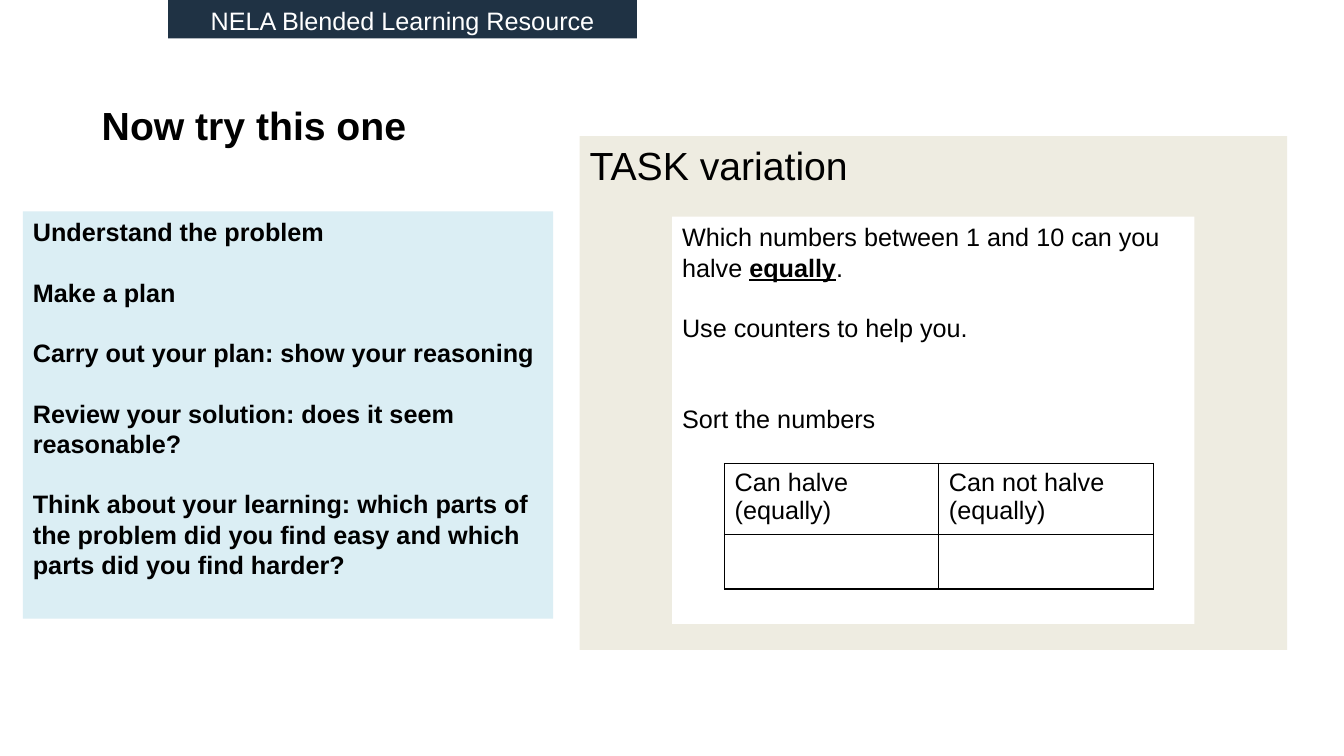
"""Builds the halving task slide."""
from lxml import etree
from pptx import Presentation
from pptx import util as u
from pptx.dml.color import RGBColor
from pptx.enum import shapes, text
from pptx.oxml.ns import qn

BLACK = RGBColor(0x00, 0x00, 0x00)
WHITE = RGBColor(0xFF, 0xFF, 0xFF)
NAVY = RGBColor(0x1F, 0x32, 0x44)
PALE_BLUE = RGBColor(0xDB, 0xEE, 0xF4)
CREAM = RGBColor(0xEE, 0xEC, 0xE1)
LINE = 21.6

STEPS = [
    "Understand the problem",
    "Make a plan",
    "Carry out your plan: show your reasoning",
    "Review your solution: does it seem reasonable?",
    "Think about your learning: which parts of the problem did you find easy "
    "and which parts did you find harder?",
]
HEADINGS = [["Can halve", "(equally)"], ["Can not halve (equally)"]]


def add_span(para, words, size=18, color=BLACK, bold=False, underline=False):
    """Append one formatted run to a paragraph."""
    span = para.add_run()
    span.text = words
    span.font.name = "Arial"
    span.font.size = u.Pt(size)
    span.font.color.rgb = color
    span.font.bold = bold
    span.font.underline = underline


def next_para(frame, index):
    """Return the first paragraph of a frame, or a new one after it."""
    para = frame.add_paragraph() if index else frame.paragraphs[0]
    para.alignment = text.PP_ALIGN.LEFT
    return para


def add_panel(page, left, top, width, height, fill):
    """Draw a plain filled rectangle and return its text frame."""
    box = page.shapes.add_shape(
        shapes.MSO_SHAPE.RECTANGLE, u.Cm(left), u.Cm(top), u.Cm(width), u.Cm(height))
    box.shadow.inherit = False
    box.fill.solid()
    box.fill.fore_color.rgb = fill
    box.line.fill.background()
    frame = box.text_frame
    frame.word_wrap = True
    frame.vertical_anchor = text.MSO_ANCHOR.TOP
    return frame


def add_paras(frame, paras):
    """Write paragraphs given as pairs of lines skipped before and runs."""
    for index, (skipped, spans) in enumerate(paras):
        para = next_para(frame, index)
        para.line_spacing = u.Pt(LINE)
        if skipped:
            para.space_before = u.Pt(skipped * LINE)
        for words, style in spans:
            add_span(para, words, **style)


def add_borders(cell):
    """Give a cell a thin black line on each side."""
    props = cell._tc.get_or_add_tcPr()
    for index, side in enumerate(("lnL", "lnR", "lnT", "lnB")):
        line = etree.Element(qn(f"a:{side}"), w=str(u.Pt(1)))
        fill = etree.SubElement(line, qn("a:solidFill"))
        etree.SubElement(fill, qn("a:srgbClr"), val=str(BLACK))
        props.insert(index, line)


def add_sorting_table(page):
    """Add the table with a heading row and an empty row to fill in."""
    table = page.shapes.add_table(
        2, 2, u.Cm(18.26), u.Cm(11.68), u.Cm(10.8), u.Cm(3.16)).table
    table.first_row = table.horz_banding = False
    for row, height in zip(table.rows, (1.79, 1.37)):
        row.height = u.Cm(height)
    for cell in table.iter_cells():
        cell.fill.solid()
        cell.fill.fore_color.rgb = WHITE
        add_borders(cell)
    for column, lines in enumerate(HEADINGS):
        frame = table.cell(0, column).text_frame
        for index, words in enumerate(lines):
            add_span(next_para(frame, index), words)


def add_title(page, words):
    """Place and fill the title placeholder."""
    title = page.shapes.title
    title.left, title.top = u.Cm(2.31), u.Cm(2.34)
    title.width, title.height = u.Cm(22.86), u.Cm(1.63)
    title.text_frame.vertical_anchor = text.MSO_ANCHOR.MIDDLE
    add_span(next_para(title.text_frame, 0), words, size=28, bold=True)


def main():
    """Build the deck and save it."""
    deck = Presentation()
    deck.slide_width, deck.slide_height = u.Cm(33.87), u.Cm(19.05)
    page = deck.slides.add_slide(deck.slide_layouts[5])
    add_title(page, "Now try this one")

    steps = add_panel(page, 0.58, 5.33, 13.36, 10.26, PALE_BLUE)
    add_paras(steps, [(min(index, 1), [(step, {"bold": True})])
                      for index, step in enumerate(STEPS)])

    banner = add_panel(page, 4.24, 0, 11.81, 0.97, NAVY)
    para = next_para(banner, 0)
    para.alignment = text.PP_ALIGN.CENTER
    add_span(para, "NELA Blended Learning Resource", color=WHITE)

    task = add_panel(page, 14.61, 3.43, 17.83, 12.95, CREAM)
    add_span(next_para(task, 0), "TASK variation", size=28)

    question = add_panel(page, 16.94, 5.46, 13.16, 10.26, WHITE)
    add_paras(question, [
        (0, [("Which numbers between 1 and 10 can you halve ", {}),
             ("equally", {"bold": True, "underline": True}), (".", {})]),
        (1, [("Use counters to help you.", {})]),
        (2, [("Sort the numbers", {})]),
    ])
    add_sorting_table(page)
    deck.save("out.pptx")


if __name__ == "__main__":
    main()
